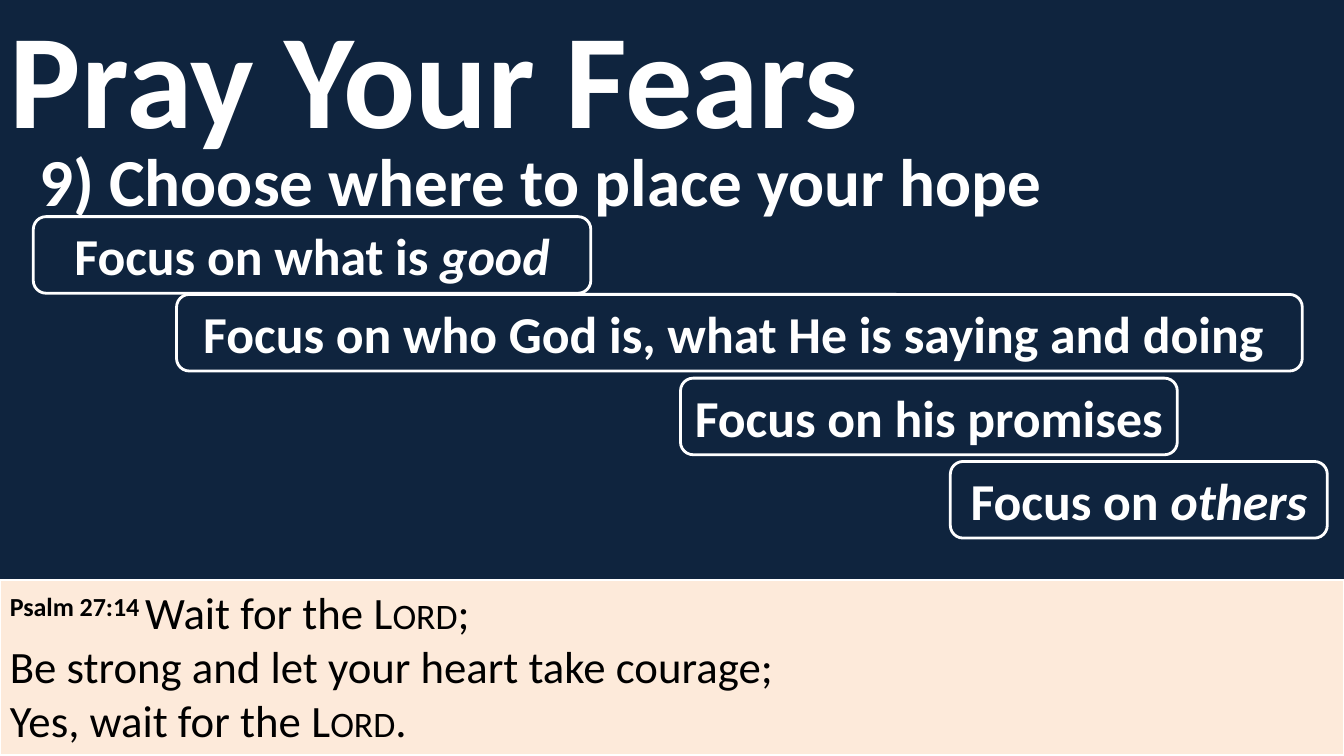
from pptx import Presentation
from pptx.dml.color import RGBColor
from pptx.enum.shapes import MSO_SHAPE as Shape
from pptx.enum.text import MSO_ANCHOR as Anchor, PP_ALIGN as Align
from pptx.util import Cm, Pt

NAVY, WHITE, PEACH, BLACK = "0F243E", "FFFFFF", "FDEADA", "000000"
WIDTH, HEIGHT = 33.87, 19.05


def color(value):
    return RGBColor.from_string(value)


class SlideBuilder:
    font = "Calibri"

    def __init__(self, deck):
        self.slide = deck.slides.add_slide(deck.slide_layouts[6])
        background = self.slide.background.fill
        background.solid()
        background.fore_color.rgb = color(NAVY)

    def add_span(self, para, text, size, ink=WHITE, bold=True, italic=False, **effects):
        span = para.add_run()
        span.text = text
        font = span.font
        font.name, font.size = self.font, Pt(size)
        font.bold, font.italic = bold, italic
        font.color.rgb = color(ink)
        properties = span._r.get_or_add_rPr()
        for name, value in effects.items():
            properties.set(name, value)

    def panel(self, left, top, width, height, fill, line_width, kind=Shape.RECTANGLE):
        box = self.slide.shapes.add_shape(kind, Cm(left), Cm(top), Cm(width), Cm(height))
        box.shadow.inherit = False
        box.fill.solid()
        box.fill.fore_color.rgb = color(fill)
        box.line.color.rgb = color(WHITE)
        box.line.width = Pt(line_width)
        box.text_frame.word_wrap = True
        return box.text_frame

    def focus(self, left, top, width, text, emphasis=""):
        frame = self.panel(left, top, width, 1.93, NAVY, 2, Shape.ROUNDED_RECTANGLE)
        frame.vertical_anchor = Anchor.MIDDLE
        para = frame.paragraphs[0]
        para.alignment = Align.CENTER
        self.add_span(para, text, 37)
        if emphasis:
            self.add_span(para, emphasis, 37, italic=True)

    def heading(self, left, top, width, height, text, size, anchor=Anchor.TOP):
        box = self.slide.shapes.add_textbox(Cm(left), Cm(top), Cm(width), Cm(height))
        frame = box.text_frame
        frame.word_wrap = True
        frame.vertical_anchor = anchor
        self.add_span(frame.paragraphs[0], text, size)

    def verse(self, top, height, reference, lines):
        frame = self.panel(0, top, WIDTH, height, PEACH, 1.5)
        frame.vertical_anchor = Anchor.TOP
        para = frame.paragraphs[0]
        para.alignment = Align.LEFT
        self.add_span(para, reference, 32, BLACK, baseline="30000")
        for index, line in enumerate(lines):
            if index:
                para.add_line_break()
            before, name, after = line.partition("Lord")
            self.add_span(para, before, 32, BLACK, bold=False)
            if name:
                self.add_span(para, name, 32, BLACK, bold=False, cap="small")
                self.add_span(para, after, 32, BLACK, bold=False)


def main():
    deck = Presentation()
    deck.slide_width, deck.slide_height = Cm(WIDTH), Cm(HEIGHT)
    page = SlideBuilder(deck)
    page.focus(17.15, 9.53, 12.52, "Focus on his promises ")
    page.focus(4.45, 7.42, 28.37, "Focus on who God is, what He is saying and doing ")
    page.focus(0.84, 5.46, 14.05, "Focus on what is ", "good")
    page.verse(14.61, 4.42, "Psalm 27:14 ", [
        "Wait for the Lord;",
        "Be strong and let your heart take courage;",
        "Yes, wait for the Lord.",
    ])
    page.heading(0, -0.03, WIDTH, 3.84, "Pray Your Fears", 96, Anchor.MIDDLE)
    page.heading(0.74, 3.38, 27.2, 2.31, "9) Choose where to place your hope", 48)
    page.focus(23.95, 11.63, 9.5, "Focus on ", "others")
    deck.save("out.pptx")


if __name__ == "__main__":
    main()
